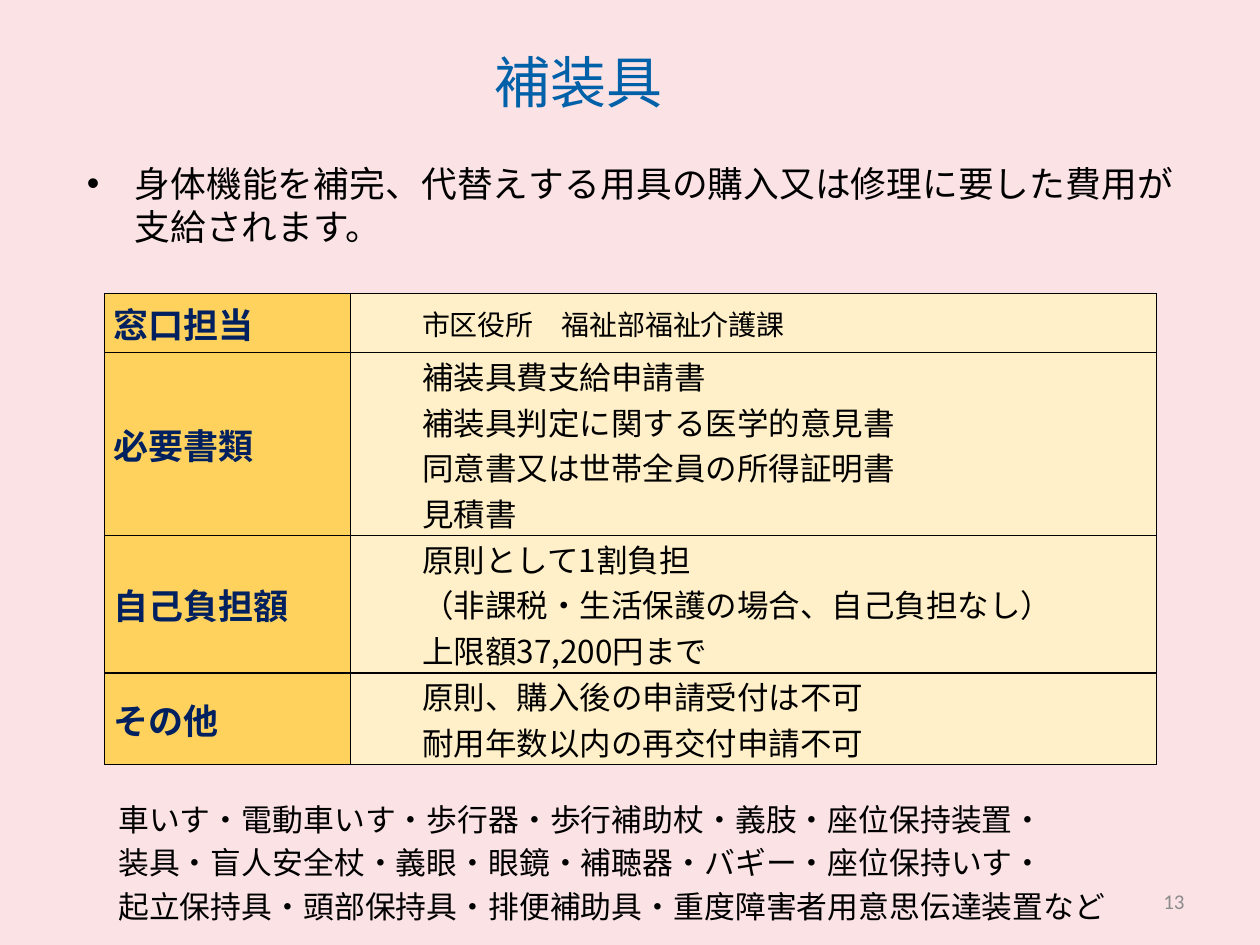
from lxml import etree
from pptx import Presentation
from pptx.dml.color import RGBColor
from pptx.enum.text import MSO_ANCHOR, PP_ALIGN
from pptx.oxml.ns import qn
from pptx.util import Inches, Pt

MIDDLE, TOP = MSO_ANCHOR.MIDDLE, MSO_ANCHOR.TOP
LEFT, CENTER, RIGHT = PP_ALIGN.LEFT, PP_ALIGN.CENTER, PP_ALIGN.RIGHT
JUSTIFY = PP_ALIGN.JUSTIFY
TITLE_ONLY = 5
FONT = "Noto Sans CJK JP"
COLORS = {
    "background": "FAE2E5",
    "title": "0060A8",
    "text": "000000",
    "heading": "002060",
    "heading fill": "FFD25D",
    "detail fill": "FFF0C9",
    "page number": "8C8C8C",
}

INTRO = "身体機能を補完、代替えする用具の購入又は修理に要した費用が支給されます。"
DEVICES = [
    "車いす・電動車いす・歩行器・歩行補助杖・義肢・座位保持装置・",
    "装具・盲人安全杖・義眼・眼鏡・補聴器・バギー・座位保持いす・",
    "起立保持具・頭部保持具・排便補助具・重度障害者用意思伝達装置など",
]
# heading, details, detail size, row height
ROWS = [
    ("窓口担当", ["市区役所　福祉部福祉介護課"], 16, 0.47),
    ("必要書類", ["補装具費支給申請書", "補装具判定に関する医学的意見書",
              "同意書又は世帯全員の所得証明書", "見積書"], 18, 1.45),
    ("自己負担額", ["原則として1割負担", "（非課税・生活保護の場合、自己負担なし）",
               "上限額37,200円まで"], 18, 1.09),
    ("その他", ["原則、購入後の申請受付は不可", "耐用年数以内の再交付申請不可"], 18, 0.73),
]
COLUMN_WIDTHS = (1.95, 6.4)
LINE_PITCH = 24.6
DEVICES_GAP = 313


def rgb(name):
    return RGBColor.from_string(COLORS[name])


def format_para(para, size, color, align, bold=False, font=FONT):
    para.alignment = align
    for span in para.runs:
        span.font.size = Pt(size)
        span.font.bold = bold
        span.font.color.rgb = rgb(color)
        span.font.name = font
        east_asian = etree.Element(qn("a:ea"), typeface=font)
        span.font._element.find(qn("a:latin")).addnext(east_asian)


def indent_para(para, left, first=0):
    properties = para._p.get_or_add_pPr()
    properties.set("marL", str(Inches(left)))
    properties.set("indent", str(Inches(first)))
    return properties


def place(shape, left, top, width, height):
    shape.left, shape.top = Inches(left), Inches(top)
    shape.width, shape.height = Inches(width), Inches(height)


def add_title(page):
    title = page.shapes.title
    place(title, 0.51, 0.29, 8.17, 1.25)
    frame = title.text_frame
    frame.text = "補装具"
    frame.vertical_anchor = MIDDLE
    frame.margin_bottom = Inches(0.6)
    format_para(frame.paragraphs[0], 32, "title", CENTER)


def add_text_box(page, bounds, text, anchor):
    box = page.shapes.add_textbox(*map(Inches, bounds))
    frame = box.text_frame
    frame.word_wrap = True
    frame.vertical_anchor = anchor
    frame.text = text
    return frame


def add_body(page):
    """The bulleted introduction above the table and the device list below it."""
    frame = add_text_box(page, (0.59, 1.23, 8.82, 6.27),
                         "\n".join([INTRO, *DEVICES]), TOP)
    frame.margin_top = Inches(0.05)
    intro, *devices = frame.paragraphs
    format_para(intro, 20.4, "text", JUSTIFY)
    properties = indent_para(intro, 0.38, -0.38)
    etree.SubElement(properties, qn("a:buFont"), typeface="Arial")
    etree.SubElement(properties, qn("a:buChar"), char="•")
    for para in devices:
        format_para(para, 17.6, "text", JUSTIFY)
        indent_para(para, 0.25)
    for para in frame.paragraphs:
        para.line_spacing = Pt(LINE_PITCH)
        para.space_before = Pt(0)
    devices[0].space_before = Pt(DEVICES_GAP)


def add_borders(cell):
    properties = cell._tc.get_or_add_tcPr()
    for position, side in enumerate(("lnL", "lnR", "lnT", "lnB")):
        line = etree.Element(qn(f"a:{side}"), w=str(Pt(1)))
        fill = etree.SubElement(line, qn("a:solidFill"))
        etree.SubElement(fill, qn("a:srgbClr"), val=COLORS["text"])
        properties.insert(position, line)


def fill_cell(cell, text, fill):
    cell.text_frame.text = text
    cell.vertical_anchor = MIDDLE
    cell.margin_left = cell.margin_right = Inches(0.07)
    cell.margin_top = cell.margin_bottom = 0
    cell.fill.solid()
    cell.fill.fore_color.rgb = rgb(fill)
    add_borders(cell)
    return cell.text_frame.paragraphs


def add_benefit_table(page):
    height = sum(row[-1] for row in ROWS)
    table = page.shapes.add_table(
        len(ROWS), len(COLUMN_WIDTHS), Inches(0.83), Inches(2.33),
        Inches(sum(COLUMN_WIDTHS)), Inches(height)).table
    table.first_row = table.horz_banding = False
    for column, width in zip(table.columns, COLUMN_WIDTHS):
        column.width = Inches(width)
    for row, (heading, details, size, row_height) in zip(table.rows, ROWS):
        row.height = Inches(row_height)
        heading_cell, detail_cell = row.cells
        for para in fill_cell(heading_cell, heading, "heading fill"):
            format_para(para, 20, "heading", JUSTIFY, bold=True)
        for para in fill_cell(detail_cell, "\n".join(details), "detail fill"):
            format_para(para, size, "text", LEFT)
            para.level = 1
            indent_para(para, 0.5)


def add_page_number(page):
    frame = add_text_box(page, (7.17, 6.95, 2.33, 0.4), "13", MIDDLE)
    format_para(frame.paragraphs[0], 12, "page number", RIGHT, font="Calibri")


def main():
    deck = Presentation()
    deck.slide_width, deck.slide_height = Inches(10), Inches(7.5)
    page = deck.slides.add_slide(deck.slide_layouts[TITLE_ONLY])
    page.background.fill.solid()
    page.background.fill.fore_color.rgb = rgb("background")
    add_title(page)
    add_body(page)
    add_benefit_table(page)
    add_page_number(page)
    deck.save("out.pptx")


if __name__ == "__main__":
    main()
